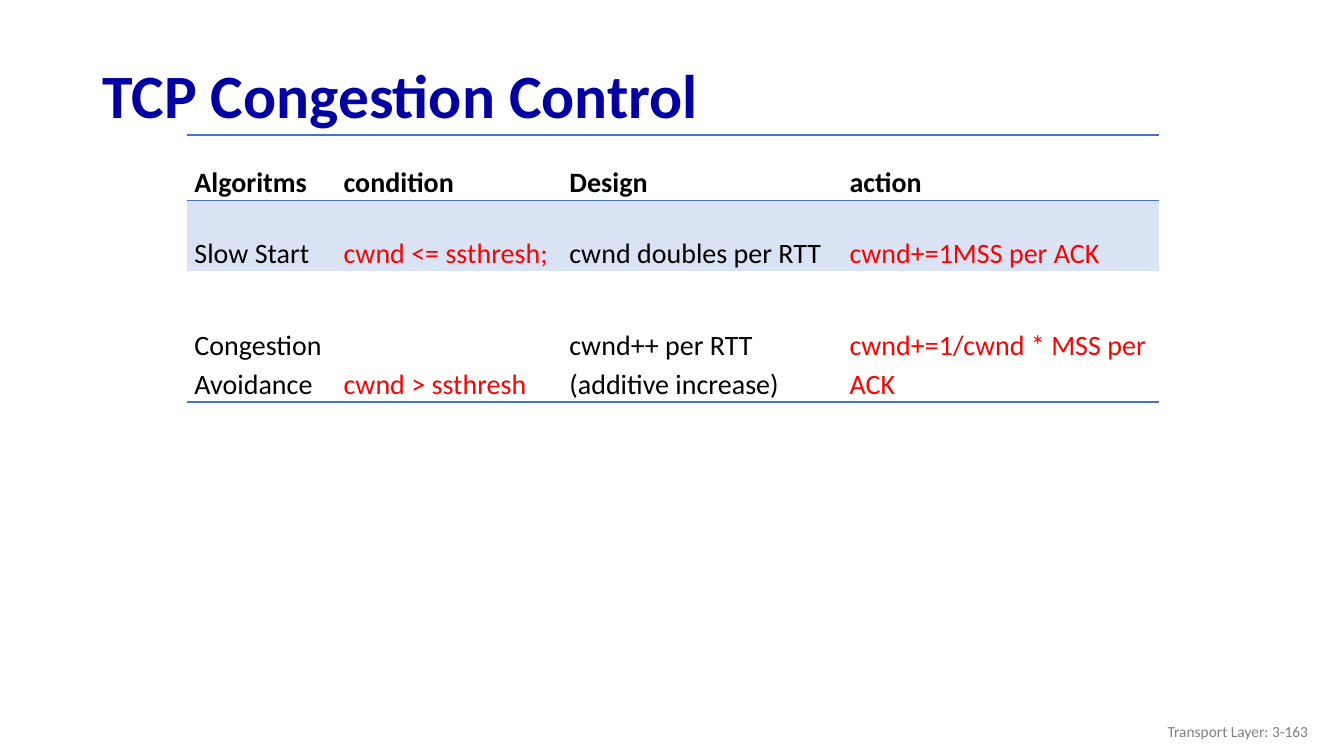
import pptx
import pptx.util
import pptx.dml.color
import pptx.enum.text
import pptx.oxml.ns
import lxml.etree

Cm, Pt = pptx.util.Cm, pptx.util.Pt
RGBColor = pptx.dml.color.RGBColor
MSO_ANCHOR, PP_ALIGN = pptx.enum.text.MSO_ANCHOR, pptx.enum.text.PP_ALIGN
qn = pptx.oxml.ns.qn

NAVY = RGBColor(0x00, 0x00, 0xA3)
BLACK = RGBColor(0x00, 0x00, 0x00)
RED = RGBColor(0xFF, 0x00, 0x00)
GRAY = RGBColor(0x80, 0x80, 0x80)
BLUE = RGBColor(0x44, 0x72, 0xC4)
PALE_BLUE = RGBColor(0xDA, 0xE3, 0xF3)


def write(tf, text, size, color, bold=False):
    tf.word_wrap = True
    tf.text = text
    p = tf.paragraphs[0]
    font = p.runs[0].font
    font.name, font.size, font.bold = "Calibri", Pt(size), bold
    font.color.rgb = color
    return p


def set_borders(cell, ruled):
    """Draw the edges named in ruled (T, B) in blue and hide the others."""
    tcPr = cell._tc.get_or_add_tcPr()
    for edge in "LRTB":
        ln = lxml.etree.SubElement(tcPr, qn("a:ln" + edge), w=str(Pt(1)))
        if edge in ruled:
            fill = lxml.etree.SubElement(ln, qn("a:solidFill"))
            lxml.etree.SubElement(fill, qn("a:srgbClr"), val=str(BLUE))
        else:
            lxml.etree.SubElement(ln, qn("a:noFill"))


prs = pptx.Presentation()
prs.slide_width, prs.slide_height = Cm(33.87), Cm(19.05)
s = prs.slides.add_slide(prs.slide_layouts[6])

title = s.shapes.add_textbox(Cm(2.33), Cm(1.25), Cm(29.21), Cm(2.49))
title.text_frame.vertical_anchor = MSO_ANCHOR.MIDDLE
p = write(title.text_frame, "TCP Congestion Control", 44, NAVY, bold=True)
p.line_spacing = 0.9

rows = [
    ["Algoritms", "condition", "Design", "action"],
    ["Slow Start", "cwnd <= ssthresh;", "cwnd doubles per RTT", "cwnd+=1MSS per ACK"],
    ["Congestion Avoidance", "cwnd > ssthresh",
     "cwnd++ per RTT (additive increase)", "cwnd+=1/cwnd * MSS per ACK"],
]
widths = [3.76, 5.69, 7.06, 7.98]
heights = [1.65, 1.78, 3.3]
ruled_edges = ["TB", "T", "B"]

table = s.shapes.add_table(len(rows), len(widths), Cm(4.72), Cm(3.4),
                           Cm(sum(widths)), Cm(sum(heights))).table
for column, width in zip(table.columns, widths):
    column.width = Cm(width)
for i, texts in enumerate(rows):
    table.rows[i].height = Cm(heights[i])
    for j, text in enumerate(texts):
        cell = table.cell(i, j)
        cell.margin_left = cell.margin_right = Cm(0.18)
        cell.margin_top = cell.margin_bottom = 0
        cell.vertical_anchor = MSO_ANCHOR.BOTTOM
        set_borders(cell, ruled_edges[i])
        if i == 1:
            cell.fill.solid()
            cell.fill.fore_color.rgb = PALE_BLUE
        else:
            cell.fill.background()
        color = RED if i > 0 and j in (1, 3) else BLACK
        p = write(cell.text_frame, text, 20, color, bold=i == 0)
        p.line_spacing = 1.15

footer = s.shapes.add_textbox(Cm(25.6), Cm(17.91), Cm(7.62), Cm(1.02))
footer.text_frame.vertical_anchor = MSO_ANCHOR.MIDDLE
p = write(footer.text_frame, "Transport Layer: 3-163", 11, GRAY)
p.alignment = PP_ALIGN.RIGHT

prs.save("out.pptx")
